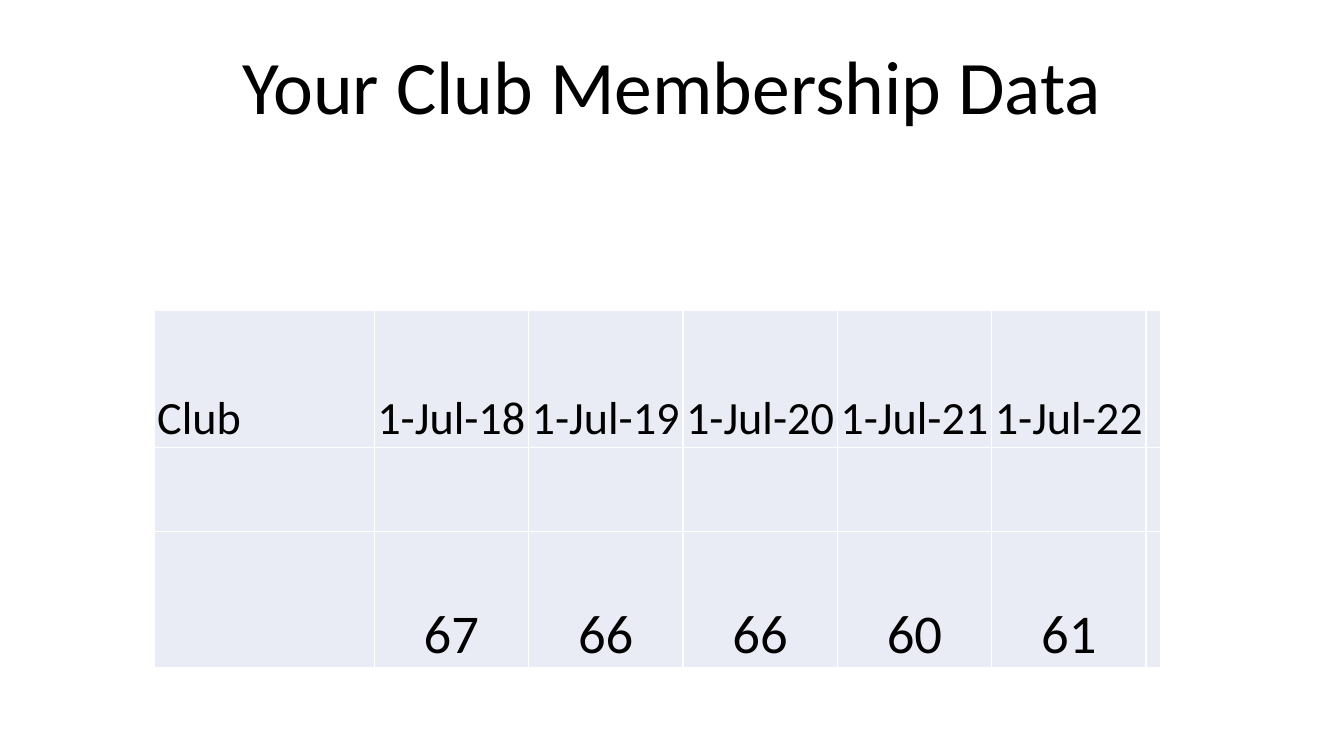
from lxml import etree
from pptx import Presentation
from pptx import util as u
from pptx.dml.color import RGBColor
from pptx.enum import text
from pptx.oxml import ns

TITLE = "Your Club Membership Data"
ROWS = [
    ["Club", "1-Jul-18", "1-Jul-19", "1-Jul-20", "1-Jul-21", "1-Jul-22", ""],
    [""] * 7,
    ["", "67", "66", "66", "60", "61", ""],
]
COLS_CM = [5.54] + [3.89] * 5 + [0.38]
ROWS_CM = [3.45, 2.13, 3.43]
THEME = dict(font="Calibri", ink="000000", cell="E9EBF5", line="FFFFFF",
             title=54, row_sizes=[33, 18, 39])


def put_text(tf, content, size, align=text.PP_ALIGN.CENTER, spacing=None):
    p = tf.paragraphs[0]
    p.alignment = align
    p.line_spacing = spacing
    p.font.size = u.Pt(size)
    if content:
        r = p.add_run()
        r.text = content
        r.font.name = THEME["font"]
        r.font.size = u.Pt(size)
        r.font.color.rgb = RGBColor.from_string(THEME["ink"])


def add_borders(cell):
    tcPr = cell._tc.get_or_add_tcPr()
    for i, side in enumerate(("lnL", "lnR", "lnT", "lnB")):
        ln = etree.Element(ns.qn("a:" + side), w=str(u.Pt(1)))
        fill = etree.SubElement(ln, ns.qn("a:solidFill"))
        etree.SubElement(fill, ns.qn("a:srgbClr"), val=THEME["line"])
        tcPr.insert(i, ln)


def add_title(s):
    tf = s.shapes.add_textbox(u.Cm(2.33), u.Cm(0.81), u.Cm(29.21), u.Cm(2.6)).text_frame
    tf.word_wrap = True
    tf.vertical_anchor = text.MSO_ANCHOR.BOTTOM
    put_text(tf, TITLE, THEME["title"], spacing=0.9)


def add_membership(s):
    table = s.shapes.add_table(len(ROWS), len(COLS_CM), u.Cm(3.89), u.Cm(7.82),
                               u.Cm(sum(COLS_CM)), u.Cm(sum(ROWS_CM))).table
    table.first_row = table.horz_banding = False
    for col, width in zip(table.columns, COLS_CM):
        col.width = u.Cm(width)
    for i, values in enumerate(ROWS):
        table.rows[i].height = u.Cm(ROWS_CM[i])
        for j, value in enumerate(values):
            cell = table.cell(i, j)
            cell.fill.solid()
            cell.fill.fore_color.rgb = RGBColor.from_string(THEME["cell"])
            cell.margin_left = cell.margin_right = cell.margin_top = u.Cm(0.07)
            cell.margin_bottom = 0
            cell.vertical_anchor = text.MSO_ANCHOR.BOTTOM
            align = text.PP_ALIGN.CENTER if j else text.PP_ALIGN.LEFT
            put_text(cell.text_frame, value, THEME["row_sizes"][i], align=align)
            add_borders(cell)


def main():
    prs = Presentation()
    prs.slide_width, prs.slide_height = u.Cm(33.87), u.Cm(19.05)
    s = prs.slides.add_slide(prs.slide_layouts[6])
    add_title(s)
    add_membership(s)
    prs.save("out.pptx")


if __name__ == "__main__":
    main()
